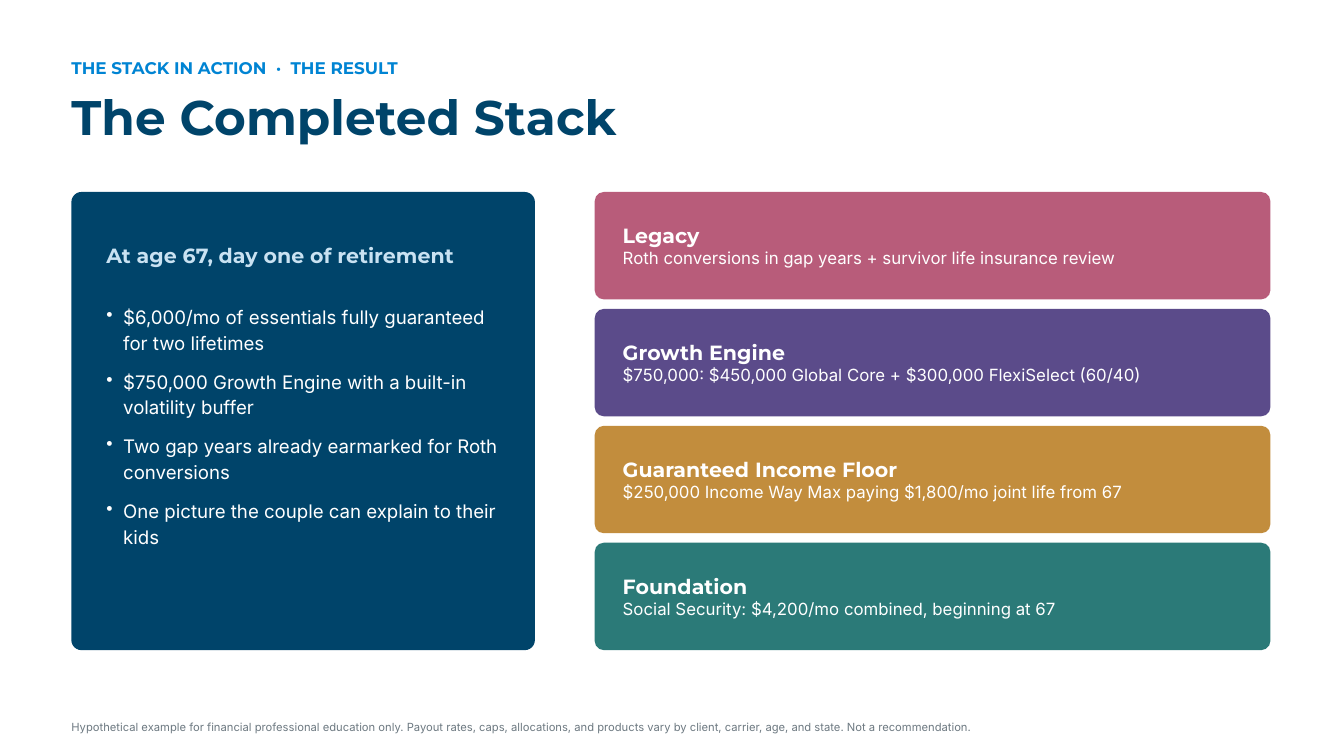
from lxml import etree
from pptx import Presentation
from pptx import util as u
from pptx.dml import color
from pptx.enum import shapes, text
from pptx.oxml import ns

HEADING = "Montserrat"
BODY = "Inter"
NAVY = "00446A"
WHITE = "FFFFFF"
MARGIN = 1.35
TOP = 3.63


def rgb(value):
    return color.RGBColor.from_string(value)


class Page:
    def __init__(self, deck):
        self.slide = deck.slides.add_slide(deck.slide_layouts[5])

    def frame(self, box, anchor):
        frame = box.text_frame
        frame.word_wrap = True
        frame.auto_size = text.MSO_AUTO_SIZE.NONE
        frame.vertical_anchor = anchor
        frame.margin_left = frame.margin_right = 0
        frame.margin_top = frame.margin_bottom = 0
        return frame

    def style(self, para, size, font, ink, bold=False, spacing=1.0):
        para.alignment = text.PP_ALIGN.LEFT
        para.line_spacing = spacing
        para.font.size = u.Pt(size)
        para.font.name = font
        para.font.bold = bold
        para.font.color.rgb = rgb(ink)

    def title(self, words, left, top, width, height):
        box = self.slide.shapes.title
        box.left, box.top = u.Cm(left), u.Cm(top)
        box.width, box.height = u.Cm(width), u.Cm(height)
        para = self.frame(box, text.MSO_ANCHOR.MIDDLE).paragraphs[0]
        para.text = words
        self.style(para, 26, HEADING, NAVY, True)

    def text(self, lines, left, top, width, height, anchor=text.MSO_ANCHOR.MIDDLE):
        box = self.slide.shapes.add_textbox(
            u.Cm(left), u.Cm(top), u.Cm(width), u.Cm(height))
        frame = self.frame(box, anchor)
        for index, (words, *look) in enumerate(lines):
            para = frame.add_paragraph() if index else frame.paragraphs[0]
            para.text = words
            self.style(para, *look)
        return frame.paragraphs

    def bullets(self, items, left, top, width, height):
        lines = [(item, 10, BODY, WHITE, False, 1.15) for item in items]
        paras = self.text(lines, left, top, width, height, text.MSO_ANCHOR.TOP)
        for index, para in enumerate(paras):
            para.space_before = u.Pt(7 if index else 0)
            props = para._p.get_or_add_pPr()
            props.set("marL", str(u.Cm(0.32)))
            props.set("indent", str(-u.Cm(0.32)))
            etree.SubElement(props, ns.qn("a:buChar")).set("char", "•")
            props.append(props.find(ns.qn("a:defRPr")))

    def card(self, fill, left, top, width, height, rounding):
        box = self.slide.shapes.add_shape(
            shapes.MSO_SHAPE.ROUNDED_RECTANGLE,
            u.Cm(left), u.Cm(top), u.Cm(width), u.Cm(height))
        box.adjustments[0] = rounding
        box.shadow.inherit = False
        box.fill.solid()
        box.fill.fore_color.rgb = rgb(fill)
        box.line.fill.background()


def main():
    deck = Presentation()
    deck.slide_width, deck.slide_height = u.Cm(25.4), u.Cm(14.29)
    page = Page(deck)

    page.text([("THE STACK IN ACTION  ·  THE RESULT", 9, HEADING, "0084D3", True)],
              MARGIN, 0.97, 13.34, 0.61)
    page.title("The Completed Stack", MARGIN, 1.37, 18.29, 1.63)

    page.card(NAVY, MARGIN, TOP, 8.76, 8.66, 0.022)
    page.text([("At age 67, day one of retirement", 11, HEADING, "C9E2F2", True, 1.1)],
              2.01, 4.19, 7.52, 1.24)
    page.bullets([
        "$6,000/mo of essentials fully guaranteed for two lifetimes",
        "$750,000 Growth Engine with a built-in volatility buffer",
        "Two gap years already earmarked for Roth conversions",
        "One picture the couple can explain to their kids",
    ], 2.01, 5.72, 7.52, 6.1)

    layers = [
        ("Legacy", "Roth conversions in gap years + survivor life insurance review",
         "B85C7A"),
        ("Growth Engine",
         "$750,000: $450,000 Global Core + $300,000 FlexiSelect (60/40)", "5B4B8A"),
        ("Guaranteed Income Floor",
         "$250,000 Income Way Max paying $1,800/mo joint life from 67", "C28D3D"),
        ("Foundation", "Social Security: $4,200/mo combined, beginning at 67", "2B7A78"),
    ]
    height, gap = 2.03, 0.18
    for row, (name, detail, fill) in reversed(list(enumerate(layers))):
        top = TOP + row * (height + gap)
        page.card(fill, 11.24, top, 12.77, height, 0.085)
        page.text([(name, 11, HEADING, WHITE, True), (detail, 9, BODY, WHITE)],
                  11.77, top, 11.81, height)

    page.text([("Hypothetical example for financial professional education only. "
                "Payout rates, caps, allocations, and products vary by client, "
                "carrier, age, and state. Not a recommendation.", 6, BODY, "6E7A82")],
              MARGIN, 13.36, 22.68, 0.76)

    deck.save("out.pptx")


if __name__ == "__main__":
    main()
